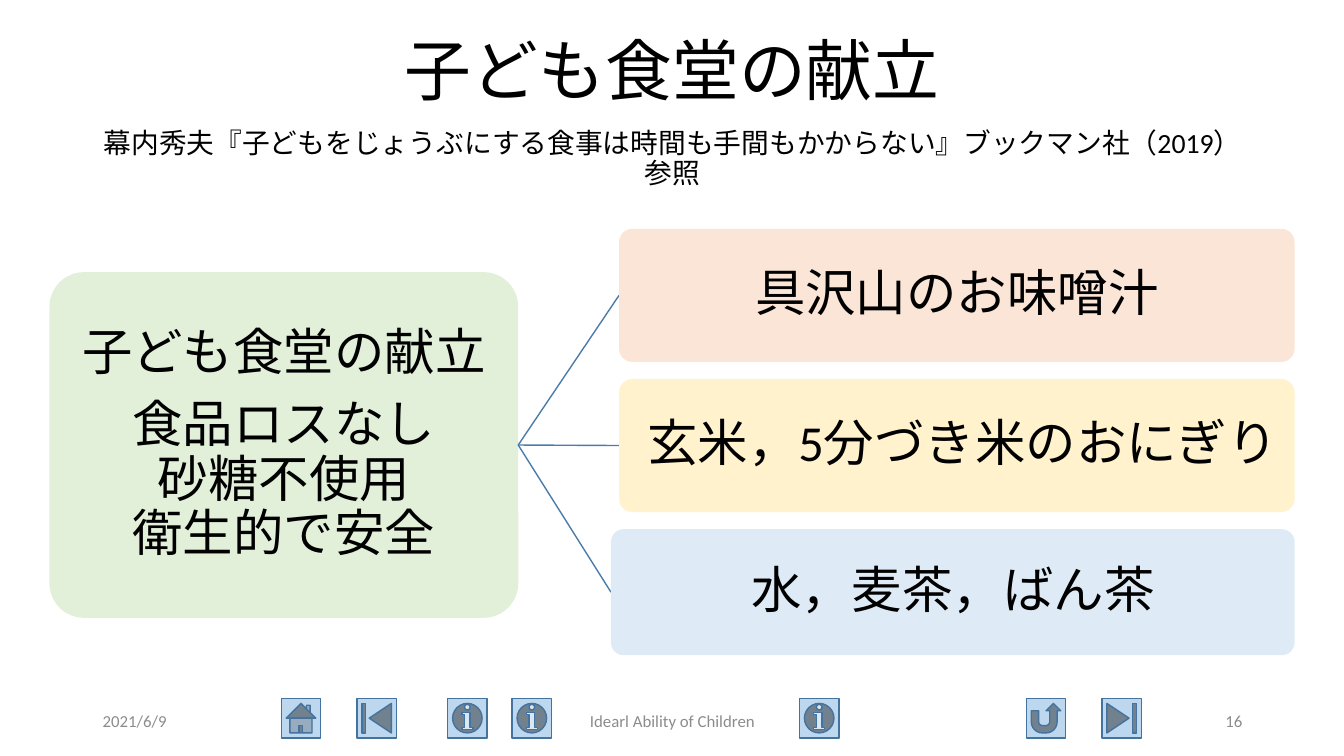
from dataclasses import dataclass

from lxml.etree import SubElement
from pptx import Presentation
from pptx.dml.color import RGBColor
from pptx.enum.lang import MSO_LANGUAGE_ID
from pptx.enum.shapes import MSO_CONNECTOR, MSO_SHAPE
from pptx.enum.text import MSO_ANCHOR, PP_ALIGN
from pptx.oxml.ns import qn
from pptx.util import Inches, Pt

BLACK = RGBColor(0x00, 0x00, 0x00)
GREY = RGBColor(0x8C, 0x8C, 0x8C)
GREEN = RGBColor(0xE2, 0xF0, 0xD9)
ORANGE = RGBColor(0xFB, 0xE5, 0xD6)
YELLOW = RGBColor(0xFF, 0xF2, 0xCC)
BLUE = RGBColor(0xDE, 0xEB, 0xF7)
BUTTON_FILL = RGBColor(0xBD, 0xD7, 0xEE)
BUTTON_LINE = RGBColor(0x43, 0x73, 0x9E)
BRANCH_LINE = RGBColor(0x49, 0x7C, 0xAB)


@dataclass
class Line:
    text: str
    size: float
    color: RGBColor = BLACK
    align: PP_ALIGN = PP_ALIGN.CENTER
    spacing: float = 0.9
    before: float = 0


@dataclass
class Card:
    left: float
    top: float
    width: float
    height: float
    fill: RGBColor
    lines: list[Line]

    @property
    def middle(self) -> float:
        return self.top + self.height / 2


@dataclass
class Button:
    kind: MSO_SHAPE
    left: float


@dataclass
class Label:
    left: float
    top: float
    width: float
    height: float
    lines: list[Line]


BUTTONS = [
    Button(MSO_SHAPE.ACTION_BUTTON_HOME, 2.79),
    Button(MSO_SHAPE.ACTION_BUTTON_BEGINNING, 3.54),
    Button(MSO_SHAPE.ACTION_BUTTON_RETURN, 10.18),
    Button(MSO_SHAPE.ACTION_BUTTON_END, 10.93),
    Button(MSO_SHAPE.ACTION_BUTTON_INFORMATION, 4.44),
    Button(MSO_SHAPE.ACTION_BUTTON_INFORMATION, 5.08),
    Button(MSO_SHAPE.ACTION_BUTTON_INFORMATION, 7.93),
]
LABELS = [
    Label(0.92, 0.4, 11.5, 1.45, [
        Line("子ども食堂の献立", 47.7),
        Line("幕内秀夫『子どもをじょうぶにする食事は時間も手間もかからない』"
             "ブックマン社（2019）参照", 19.8, before=14),
    ]),
    Label(0.92, 6.95, 3, 0.4, [Line("2021/6/9", 12, GREY, PP_ALIGN.LEFT, 1)]),
    Label(4.42, 6.95, 4.5, 0.4, [Line("Idearl Ability of Children", 12, GREY, spacing=1)]),
    Label(9.42, 6.95, 3, 0.4, [Line("16", 12, GREY, PP_ALIGN.RIGHT, 1)]),
]
ROOT = Card(0.49, 2.7, 4.65, 3.43, GREEN, [
    Line("子ども食堂の献立", 36),
    Line("食品ロスなし\v砂糖不使用\v衛生的で安全", 36, before=12.6),
])
DISHES = [
    Card(6.14, 2.27, 6.7, 1.32, ORANGE, [Line("具沢山のお味噌汁", 36)]),
    Card(6.14, 3.76, 6.7, 1.32, YELLOW, [Line(" 玄米，5分づき米のおにぎり", 36)]),
    Card(6.06, 5.25, 6.78, 1.25, BLUE, [Line("水，麦茶，ばん茶", 36)]),
]


def set_all(target, values: dict) -> None:
    for name, value in values.items():
        setattr(target, name, value)


def write(shape, lines: list[Line], inset: float | None = None) -> None:
    frame = shape.text_frame
    set_all(frame, {"word_wrap": True, "vertical_anchor": MSO_ANCHOR.MIDDLE})
    if inset is not None:
        set_all(frame, {f"margin_{side}": Inches(inset)
                        for side in ("left", "top", "right", "bottom")})
    for number, line in enumerate(lines):
        para = frame.add_paragraph() if number else frame.paragraphs[0]
        para.text = line.text
        set_all(para, {"alignment": line.align, "line_spacing": line.spacing})
        if line.before:
            para.space_before = Pt(line.before)
        for span in para.runs:
            set_all(span.font, {"name": "Calibri", "size": Pt(line.size),
                                "language_id": MSO_LANGUAGE_ID.JAPANESE})
            span.font.color.rgb = line.color


def add_button(page, button: Button) -> None:
    shape = page.shapes.add_shape(button.kind, Inches(button.left), Inches(6.93),
                                  Inches(0.39), Inches(0.39))
    shape.shadow.inherit = False
    shape.fill.solid()
    shape.fill.fore_color.rgb = BUTTON_FILL
    shape.line.color.rgb = BUTTON_LINE
    shape.line.width = Pt(1)


def add_label(page, label: Label) -> None:
    box = page.shapes.add_textbox(Inches(label.left), Inches(label.top),
                                  Inches(label.width), Inches(label.height))
    write(box, label.lines)


def add_card(page, card: Card) -> None:
    shape = page.shapes.add_shape(MSO_SHAPE.ROUNDED_RECTANGLE, Inches(card.left),
                                  Inches(card.top), Inches(card.width), Inches(card.height))
    shape.adjustments[0] = 0.1
    shape.shadow.inherit = False
    shape.fill.solid()
    shape.fill.fore_color.rgb = card.fill
    shape.line.fill.background()
    write(shape, card.lines, 0.03)


def add_branch(page, start: Card, end: Card) -> None:
    branch = page.shapes.add_connector(
        MSO_CONNECTOR.STRAIGHT, Inches(start.left + start.width), Inches(start.middle),
        Inches(end.left), Inches(end.middle))
    branch.line.color.rgb = BRANCH_LINE
    branch.line.width = Pt(1)
    SubElement(branch._element.spPr, qn("a:effectLst"))


def main() -> None:
    deck = Presentation()
    set_all(deck, {"slide_width": Inches(13.33), "slide_height": Inches(7.5)})
    page = deck.slides.add_slide(deck.slide_layouts[6])

    # Navigation buttons, title and footer
    for button in BUTTONS:
        add_button(page, button)
    for label in LABELS:
        add_label(page, label)

    # Menu tree
    add_card(page, ROOT)
    for dish in DISHES:
        add_branch(page, ROOT, dish)
        add_card(page, dish)

    deck.save("out.pptx")


if __name__ == "__main__":
    main()
